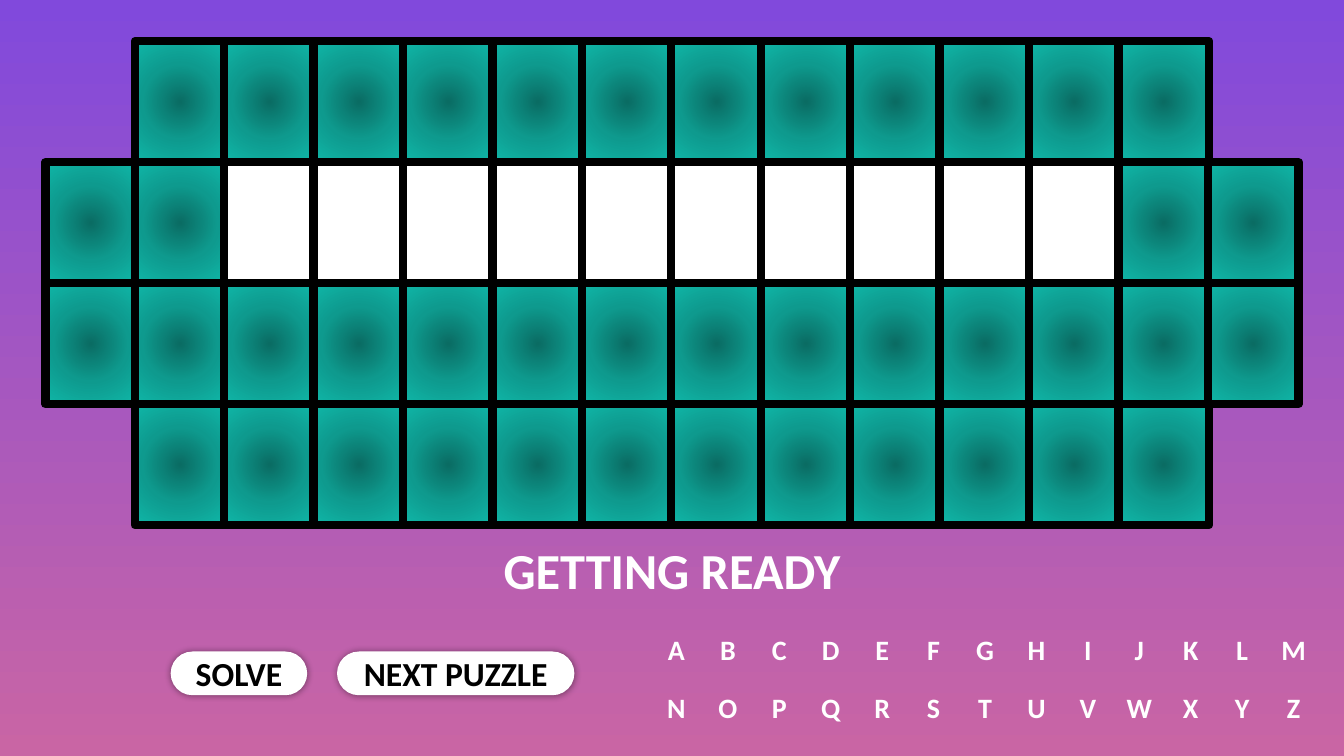
from dataclasses import dataclass

from pptx import Presentation
from pptx.dml.color import RGBColor
from pptx.enum.shapes import MSO_SHAPE
from pptx.enum.text import MSO_ANCHOR, PP_ALIGN
from pptx.oxml import parse_xml
from pptx.oxml.ns import nsdecls, qn
from pptx.util import Inches, Pt


@dataclass(frozen=True)
class Theme:
    font: str = "Calibri"
    white: str = "FFFFFF"
    black: str = "000000"
    sky: tuple = ("8149DC", "C965A4")
    teal: tuple = ((0, "0A6C63"), (50, "0E9A8E"), (100, "10B7A8"))
    clue_size: int = 36
    button_size: int = 24
    letter_size: int = 20
    tile_line: int = 6
    button_line: int = 1


THEME = Theme()

# One character per board column: T is a teal tile, W a white one
BOARD = (
    " TTTTTTTTTTTT ",
    "TTWWWWWWWWWWTT",
    "TTTTTTTTTTTTTT",
    " TTTTTTTTTTTT ",
)
BOARD_LEFT, BOARD_TOP, LAST_TILE_LEFT = 0.45, 0.41, 11.98
TILE_WIDTH, TILE_HEIGHT = 0.9, 1.2

ALPHABET = ("ABCDEFGHIJKLM", "NOPQRSTUVWXYZ")
LETTERS_LEFT, LETTERS_TOP = 6.51, 6.13
LETTER_STEP, LETTER_ROW_STEP = 0.51, 0.58

BUTTONS = (("SOLVE", 1.7, 1.34), ("NEXT PUZZLE", 3.35, 2.34))


def set_values(target, values):
    for name, value in values.items():
        setattr(target, name, value)


def write_text(shape, text, size, color):
    """Put one bold, centred line in the shape."""
    frame = shape.text_frame
    frame.text = text
    set_values(frame, {
        "word_wrap": True, "vertical_anchor": MSO_ANCHOR.MIDDLE,
        "margin_left": 0, "margin_right": 0,
        "margin_top": 0, "margin_bottom": 0,
    })
    para = frame.paragraphs[0]
    para.alignment = PP_ALIGN.CENTER
    span = para.runs[0]
    set_values(span.font, {"name": THEME.font, "size": Pt(size), "bold": True})
    span.font.color.rgb = RGBColor.from_string(color)


def add_panel(page, kind, place, line_color, line_width):
    """Add a white shape with a plain outline and no shadow."""
    panel = page.shapes.add_shape(kind, *map(Inches, place))
    panel.shadow.inherit = False
    panel.fill.solid()
    panel.fill.fore_color.rgb = RGBColor.from_string(THEME.white)
    panel.line.color.rgb = RGBColor.from_string(line_color)
    panel.line.width = Pt(line_width)
    return panel


def fill_from_centre(shape, stops):
    """Replace the solid fill with a circular gradient."""
    marks = "".join(
        f'<a:gs pos="{position * 1000}"><a:srgbClr val="{color}"/></a:gs>'
        for position, color in stops
    )
    gradient = parse_xml(
        f'<a:gradFill {nsdecls("a")} rotWithShape="1"><a:gsLst>{marks}</a:gsLst>'
        '<a:path path="circle"><a:fillToRect l="50000" t="50000" r="50000" b="50000"/>'
        '</a:path></a:gradFill>'
    )
    properties = shape._element.spPr
    properties.replace(properties.find(qn("a:solidFill")), gradient)


def add_glow_shadow(shape):
    """Give the shape a soft shadow on all sides."""
    effects = shape._element.spPr.find(qn("a:effectLst"))
    effects.append(parse_xml(
        f'<a:outerShdw {nsdecls("a")} blurRad="{Pt(5)}" dist="0" dir="0" algn="ctr" '
        f'rotWithShape="0"><a:srgbClr val="{THEME.black}"><a:alpha val="40000"/>'
        '</a:srgbClr></a:outerShdw>'
    ))


def paint_background(page):
    fill = page.background.fill
    fill.gradient()
    fill.gradient_angle = 270
    for stop, color in zip(fill.gradient_stops, THEME.sky):
        stop.color.rgb = RGBColor.from_string(color)


def add_board(page):
    step = (LAST_TILE_LEFT - BOARD_LEFT) / (len(BOARD[0]) - 1)
    for row, pattern in enumerate(BOARD):
        for column, mark in enumerate(pattern):
            if mark == " ":
                continue
            place = (BOARD_LEFT + column * step, BOARD_TOP + row * TILE_HEIGHT,
                     TILE_WIDTH, TILE_HEIGHT)
            tile = add_panel(page, MSO_SHAPE.RECTANGLE, place,
                             THEME.black, THEME.tile_line)
            if mark == "T":
                fill_from_centre(tile, THEME.teal)


def add_clue(page, text):
    clue = page.shapes.title
    set_values(clue, {"left": Inches(0), "top": Inches(5.34),
                      "width": Inches(13.33), "height": Inches(0.62)})
    write_text(clue, text, THEME.clue_size, THEME.white)


def add_button(page, label, left, width):
    button = add_panel(page, MSO_SHAPE.ROUNDED_RECTANGLE, (left, 6.47, width, 0.42),
                       THEME.white, THEME.button_line)
    button.adjustments[0] = 0.5
    add_glow_shadow(button)
    write_text(button, label, THEME.button_size, THEME.black)


def add_alphabet(page):
    for row, letters in enumerate(ALPHABET):
        for column, letter in enumerate(letters):
            box = page.shapes.add_textbox(
                Inches(LETTERS_LEFT + column * LETTER_STEP),
                Inches(LETTERS_TOP + row * LETTER_ROW_STEP),
                Inches(0.4), Inches(0.62))
            write_text(box, letter, THEME.letter_size, THEME.white)


def main():
    deck = Presentation()
    set_values(deck, {"slide_width": Inches(13.33), "slide_height": Inches(7.5)})
    page = deck.slides.add_slide(deck.slide_layouts.get_by_name("Title Only"))
    paint_background(page)
    add_board(page)
    add_clue(page, "GETTING READY")
    for label, left, width in BUTTONS:
        add_button(page, label, left, width)
    add_alphabet(page)
    deck.save("out.pptx")


if __name__ == "__main__":
    main()
